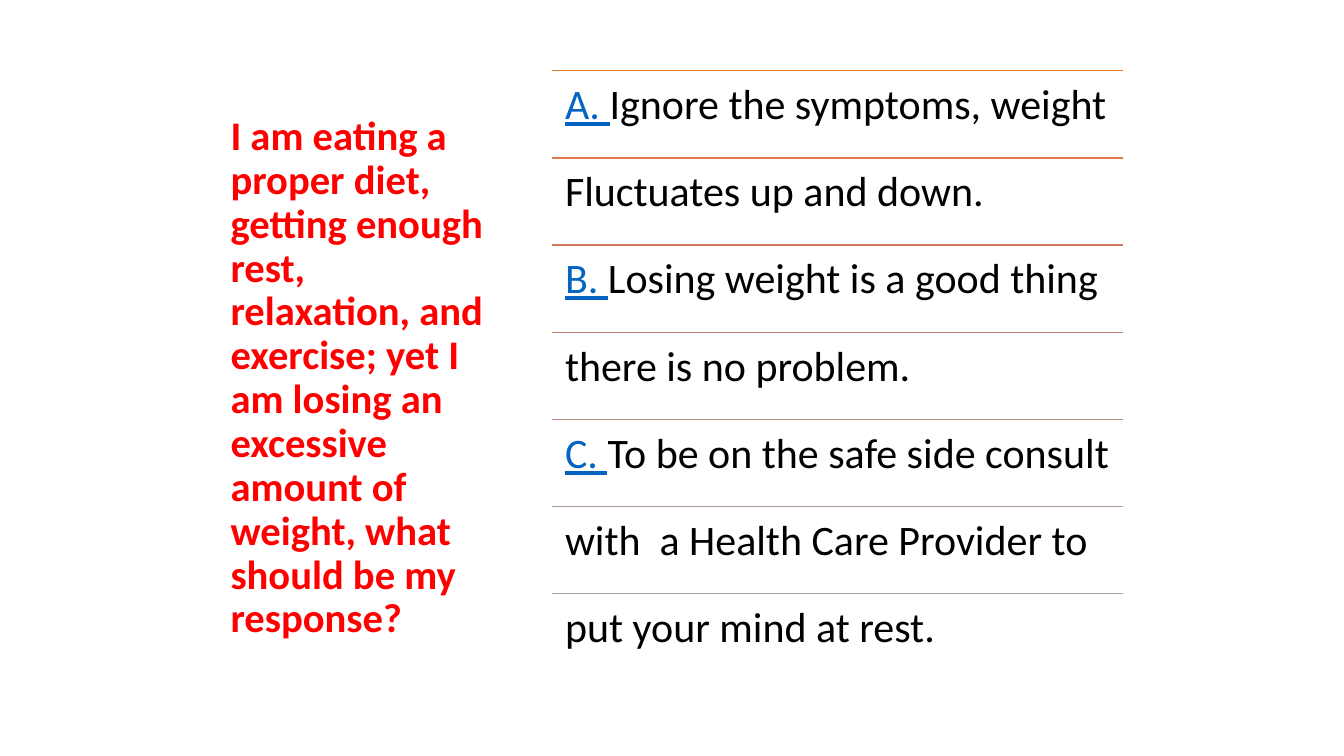
from dataclasses import dataclass

from pptx import Presentation
from pptx.dml import color
from pptx.enum import shapes, text
from pptx.oxml import ns
from pptx.util import Cm, Pt
from lxml import etree


@dataclass(frozen=True)
class Theme:
    """Colours and type sizes of the deck."""
    font: str = "Calibri"
    question: str = "FF0000"
    body: str = "000000"
    marker: str = "0563C1"
    rules: tuple = ("ED7D31", "DE7A47", "D17B5C", "C48170", "B98A82", "AE9694", "A5A5A5")
    question_size: int = 29
    answer_size: int = 30
    rule_width: int = 1
    line_spacing: float = 0.9


THEME = Theme()
QUESTION = ("I am eating a proper diet, getting enough rest, relaxation, and exercise; "
            "yet I am losing an excessive amount of weight, what should be my response?")
ANSWERS = (
    ("A. ", "Ignore the symptoms, weight"),
    ("", "Fluctuates up and down."),
    ("B. ", "Losing weight is a good thing"),
    ("", "there is no problem."),
    ("C. ", "To be on the safe side consult"),
    ("", "with  a Health Care Provider to"),
    ("", "put your mind at rest."),
)


def add_span(para, wording, size, colour, bold=False, underline=False):
    """Append one formatted run to a paragraph."""
    span = para.add_run()
    span.text = wording
    font = span.font
    font.name, font.size, font.bold, font.underline = THEME.font, Pt(size), bold, underline
    font.color.rgb = color.RGBColor.from_string(colour)


def add_text_area(page, box, margins, anchor):
    """Add a wrapping text box and return its first paragraph."""
    frame = page.shapes.add_textbox(*box).text_frame
    frame.word_wrap = True
    frame.vertical_anchor = anchor
    frame.margin_left = frame.margin_right = margins[0]
    frame.margin_top = frame.margin_bottom = margins[1]
    para = frame.paragraphs[0]
    para.line_spacing = THEME.line_spacing
    return para


def add_rule(page, left, top, width, colour):
    """Draw a thin horizontal rule without a shadow."""
    rule = page.shapes.add_connector(
        shapes.MSO_CONNECTOR.STRAIGHT, left, top, left + width, top)
    rule.line.color.rgb = color.RGBColor.from_string(colour)
    rule.line.width = Pt(THEME.rule_width)
    etree.SubElement(rule.element.spPr, ns.qn("a:effectLst"))


def add_question(page, box):
    """Place the question, centred vertically in its box."""
    para = add_text_area(page, box, (Cm(0.25), Cm(0.13)), text.MSO_ANCHOR.MIDDLE)
    add_span(para, QUESTION, THEME.question_size, THEME.question, bold=True)


def add_answers(page, box):
    """Split the box into equal rows, each a rule with an answer line below."""
    left, top, width, height = box
    row_height = height // len(ANSWERS)
    for row, ((marker, wording), colour) in enumerate(zip(ANSWERS, THEME.rules)):
        row_top = top + row * row_height
        add_rule(page, left, row_top, width, colour)
        para = add_text_area(page, (left, row_top, width, row_height),
                             (Cm(0.32), Cm(0.32)), text.MSO_ANCHOR.TOP)
        if marker:
            add_span(para, marker, THEME.answer_size, THEME.marker, underline=True)
        add_span(para, wording, THEME.answer_size, THEME.body)


def main():
    """Build the deck and save it."""
    deck = Presentation()
    deck.slide_width, deck.slide_height = Cm(33.87), Cm(19.05)
    page = deck.slides.add_slide(deck.slide_layouts[6])
    add_question(page, (Cm(5.56), Cm(1.78), Cm(7.11), Cm(15.52)))
    add_answers(page, (Cm(13.92), Cm(1.78), Cm(14.38), Cm(15.38)))
    deck.save("out.pptx")


if __name__ == "__main__":
    main()
